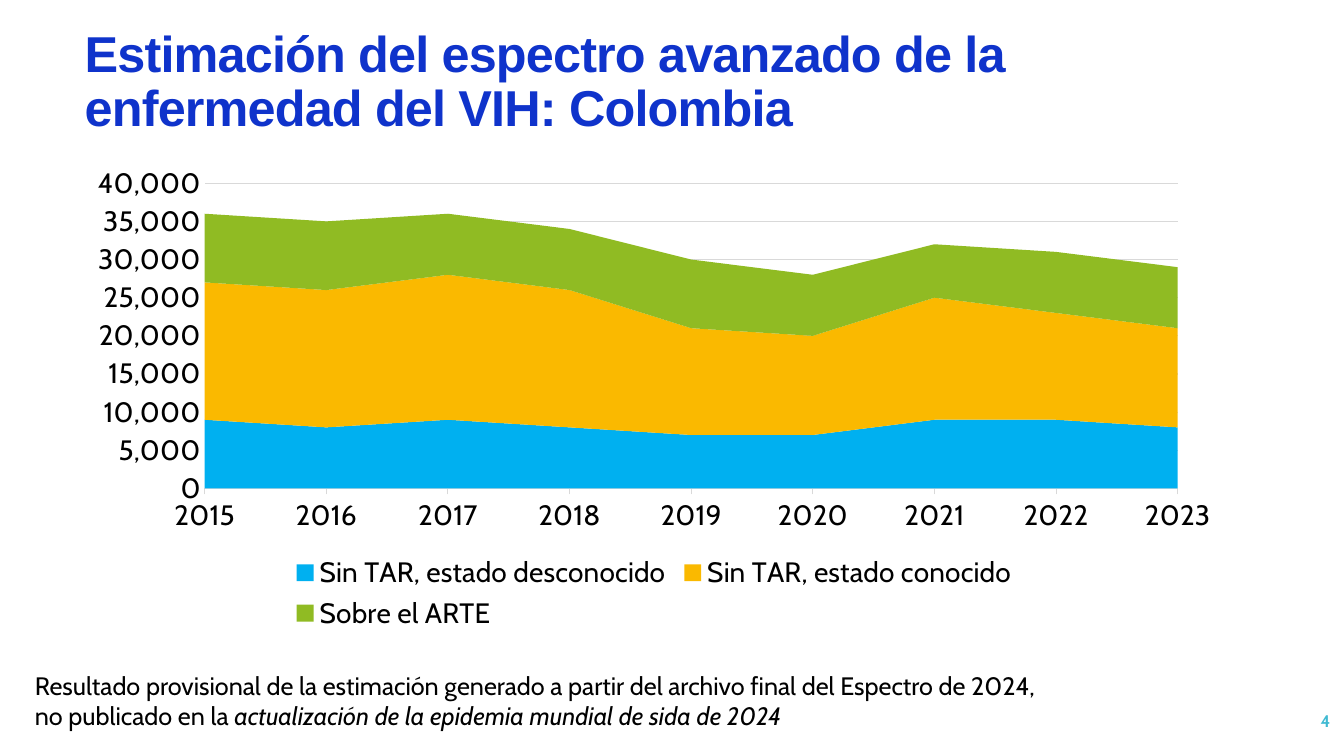
from pptx import Presentation
from pptx.chart.data import CategoryChartData
from pptx.dml.color import RGBColor
from pptx.enum.chart import XL_CHART_TYPE, XL_LEGEND_POSITION, XL_TICK_MARK
from pptx.enum.text import MSO_ANCHOR, PP_ALIGN
from pptx.util import Cm, Pt

AREA_STACKED = XL_CHART_TYPE.AREA_STACKED
BOTTOM = XL_LEGEND_POSITION.BOTTOM
OUTSIDE, NO_TICK = XL_TICK_MARK.OUTSIDE, XL_TICK_MARK.NONE
MIDDLE, LEFT, RIGHT = MSO_ANCHOR.MIDDLE, PP_ALIGN.LEFT, PP_ALIGN.RIGHT

# Boxes: left, top, width, height in cm
TITLE_BOX = (1.88, 1.02, 27.33, 2.16)
CHART_BOX = (1.88, 3.94, 29.21, 12.09)
NOTE_BOX = (0.63, 16.76, 26.19, 1.8)
NUMBER_BOX = (29.54, 17.65, 4.24, 1.02)

TITLE_FONT = {"name": "Arial", "size": Pt(36), "bold": True}
BODY_FONT = {"name": "Cabin", "size": Pt(18)}
CHART_FONT = {"name": "Cabin", "size": Pt(20)}
NUMBER_FONT = {"name": "Cabin", "size": Pt(12), "bold": True}
GREY = "D9D9D9"

YEARS = [str(year) for year in range(2015, 2024)]
SERIES = [
    ("Sin TAR, estado desconocido", "00B0F0",
     (9000, 8000, 9000, 8000, 7000, 7000, 9000, 9000, 8000)),
    ("Sin TAR, estado conocido", "FAB900",
     (18000, 18000, 19000, 18000, 14000, 13000, 16000, 14000, 13000)),
    ("Sobre el ARTE", "90BB23",
     (9000, 9000, 8000, 8000, 9000, 8000, 7000, 8000, 8000)),
]


def rgb(value):
    return RGBColor.from_string(value)


def format_font(font, values, color):
    for name, value in values.items():
        setattr(font, name, value)
    font.color.rgb = rgb(color)


def add_run(p, text, values, color):
    r = p.add_run()
    r.text = text
    format_font(r.font, values, color)
    return r


def add_text_box(s, box):
    tf = s.shapes.add_textbox(*map(Cm, box)).text_frame
    tf.word_wrap = True
    return tf


def add_title(s, box, text):
    sp = s.shapes.title
    sp.left, sp.top, sp.width, sp.height = map(Cm, box)
    tf = sp.text_frame
    tf.vertical_anchor = MIDDLE
    p = tf.paragraphs[0]
    p.alignment, p.line_spacing = LEFT, 0.9
    r = add_run(p, text, TITLE_FONT, "0F33CB")
    r.font._element.set("spc", "-60")


def add_area_chart(s, box):
    data = CategoryChartData(number_format="#,##0")
    data.categories = YEARS
    for name, _, values in SERIES:
        data.add_series(name, values)
    chart = s.shapes.add_chart(AREA_STACKED, *map(Cm, box), data).chart
    chart.has_title = False
    format_font(chart.font, CHART_FONT, "000000")

    # Series colours
    for series, (_, color, _) in zip(chart.plots[0].series, SERIES):
        series.format.fill.solid()
        series.format.fill.fore_color.rgb = rgb(color)
        series.format.line.fill.background()

    # Axes and gridlines
    years, people = chart.category_axis, chart.value_axis
    years.has_major_gridlines = False
    years.major_tick_mark, people.major_tick_mark = OUTSIDE, NO_TICK
    years.minor_tick_mark = people.minor_tick_mark = NO_TICK
    people.minimum_scale, people.maximum_scale, people.major_unit = 0, 40000, 5000
    people.tick_labels.number_format = "#,##0"
    people.tick_labels.number_format_is_linked = False
    people.format.line.fill.background()
    for line in (years.format.line, people.major_gridlines.format.line):
        line.color.rgb = rgb(GREY)
        line.width = Pt(0.75)
    for axis in (years, people):
        format_font(axis.tick_labels.font, CHART_FONT, "000000")

    # Legend
    chart.has_legend = True
    chart.legend.position = BOTTOM
    chart.legend.include_in_layout = False
    format_font(chart.legend.font, CHART_FONT, "000000")


def add_note(s, box):
    p = add_text_box(s, box).paragraphs[0]
    add_run(p, "Resultado provisional de la estimación generado a partir del "
               "archivo final del Espectro de 2024, ", BODY_FONT, "000000")
    p.add_line_break()
    add_run(p, "no publicado en la ", BODY_FONT, "000000")
    add_run(p, "actualización de la epidemia mundial de sida de 2024",
            {**BODY_FONT, "italic": True}, "000000")


def add_slide_number(s, box, number):
    tf = add_text_box(s, box)
    tf.vertical_anchor = MIDDLE
    p = tf.paragraphs[0]
    p.alignment = RIGHT
    add_run(p, number, NUMBER_FONT, "40BAD2")


def main():
    prs = Presentation()
    prs.slide_width, prs.slide_height = Cm(33.87), Cm(19.05)
    s = prs.slides.add_slide(prs.slide_layouts[5])
    add_title(s, TITLE_BOX,
              "Estimación del espectro avanzado de la enfermedad del VIH: Colombia")
    add_area_chart(s, CHART_BOX)
    add_note(s, NOTE_BOX)
    add_slide_number(s, NUMBER_BOX, "4")
    prs.save("out.pptx")


if __name__ == "__main__":
    main()
